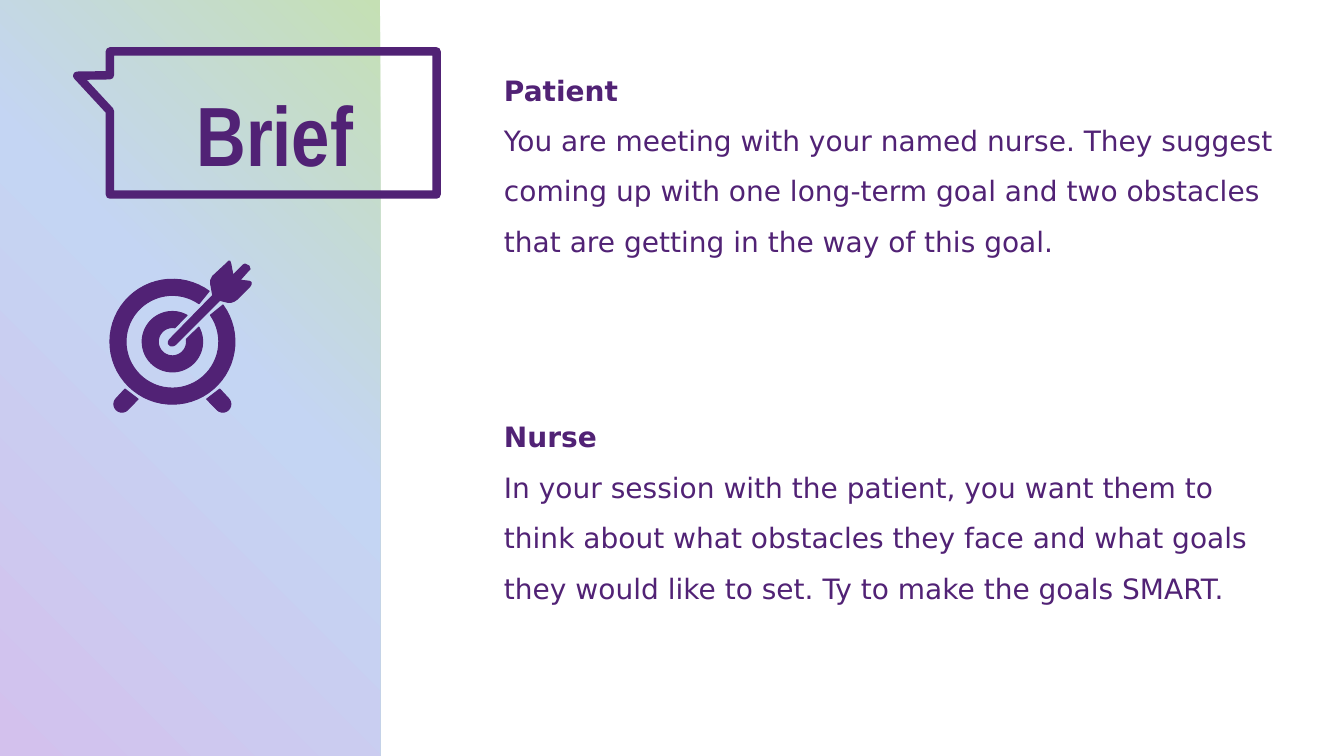
from math import cos, radians, sin

from pptx import Presentation
from pptx.dml.color import RGBColor
from pptx.enum.shapes import MSO_SHAPE
from pptx.enum.text import MSO_AUTO_SIZE
from pptx.oxml import parse_xml
from pptx.oxml.ns import nsdecls, qn
from pptx.util import Inches, Pt

PURPLE = RGBColor(0x51, 0x22, 0x75)
PINK = RGBColor(0xD3, 0xC1, 0xED)
BLUE = RGBColor(0xC4, 0xD5, 0xF3)
GREEN = RGBColor(0xC5, 0xE0, 0xB4)

TARGET_X, TARGET_Y = 1.71, 3.39

BRIEFS = [
    (0.51, 2.05, "Patient",
     "You are meeting with your named nurse. They suggest coming up with one "
     "long-term goal and two obstacles that are getting in the way of this goal."),
    (3.95, 2.12, "Nurse",
     "In your session with the patient, you want them to think about what obstacles "
     "they face and what goals they would like to set. Ty to make the goals SMART."),
]

ARROW = [
    (2.27, 2.59), (2.25, 2.61), (2.11, 2.74), (2.09, 2.78), (2.09, 2.82),
    (2.11, 2.93), (1.68, 3.37), (1.67, 3.39), (1.67, 3.41), (1.69, 3.43),
    (1.72, 3.43), (1.74, 3.42), (2.18, 2.98), (2.26, 3), (2.29, 3),
    (2.32, 2.99), (2.35, 2.97), (2.48, 2.84), (2.49, 2.82), (2.49, 2.8),
    (2.47, 2.79), (2.38, 2.78), (2.46, 2.69), (2.48, 2.67), (2.47, 2.64),
    (2.45, 2.63), (2.43, 2.62), (2.41, 2.63), (2.31, 2.73), (2.29, 2.62),
    (2.28, 2.59),
]


def arc(x, y, radius, start, end, steps=60):
    angles = [radians(start + (end - start) * step / steps) for step in range(steps + 1)]
    return [(x + radius * cos(angle), y + radius * sin(angle)) for angle in angles]


def open_ring(outer, inner, outer_gap, inner_gap):
    return (arc(TARGET_X, TARGET_Y, outer, -45 + outer_gap, 315 - outer_gap)
            + arc(TARGET_X, TARGET_Y, inner, 315 - inner_gap, -45 + inner_gap))


class SlideBuilder:
    def __init__(self, page, color):
        self.page = page
        self.color = color

    def apply(self, item, values):
        for name, value in values.items():
            setattr(item, name, value)

    def shape(self, kind, left, top, width, height):
        shape = self.page.shapes.add_shape(
            kind, Inches(left), Inches(top), Inches(width), Inches(height))
        shape.shadow.inherit = False
        return shape

    def panel(self, left, top, width, height, stops):
        panel = self.shape(MSO_SHAPE.RECTANGLE, left, top, width, height)
        panel.line.fill.background()
        panel.fill.gradient()
        marks = "".join(
            f'<a:gs pos="{percent * 1000}"><a:srgbClr val="{color}"/></a:gs>'
            for percent, color in stops)
        gradient = parse_xml(
            f'<a:gradFill {nsdecls("a")} rotWithShape="1"><a:gsLst>{marks}</a:gsLst>'
            '<a:path path="circle"><a:fillToRect t="100000" r="100000"/></a:path>'
            '</a:gradFill>')
        properties = panel._element.spPr
        properties.replace(properties.find(qn("a:gradFill")), gradient)

    def callout(self, left, top, width, height, tip):
        callout = self.shape(MSO_SHAPE.RECTANGULAR_CALLOUT, left, top, width, height)
        for index, value in enumerate(tip):
            callout.adjustments[index] = value
        callout.fill.background()
        callout.line.color.rgb = self.color
        callout.line.width = Pt(6)

    def text(self, left, top, width, height, lines, font, spacing, level=0, indent=0):
        box = self.page.shapes.add_textbox(
            Inches(left), Inches(top), Inches(width), Inches(height))
        frame = box.text_frame
        self.apply(frame, {"word_wrap": True, "auto_size": MSO_AUTO_SIZE.SHAPE_TO_FIT_TEXT})
        for index, (words, bold) in enumerate(lines):
            para = frame.paragraphs[0] if index == 0 else frame.add_paragraph()
            self.apply(para, {"line_spacing": spacing, "level": level})
            if indent:
                settings = para._p.get_or_add_pPr()
                settings.set("marL", str(Inches(indent)))
                settings.set("indent", "0")
            span = para.add_run()
            span.text = words
            self.apply(span.font, {**font, "bold": bold})
            span.font.color.rgb = self.color

    def icon(self, outlines):
        group = self.page.shapes.add_group_shape()
        for outline in outlines:
            points = [(Inches(x), Inches(y)) for x, y in outline]
            builder = group.shapes.build_freeform(*points[0])
            builder.add_line_segments(points[1:], close=True)
            part = builder.convert_to_shape()
            part.shadow.inherit = False
            part.fill.solid()
            part.fill.fore_color.rgb = self.color
            part.line.color.rgb = self.color
            part.line.width = Pt(0.75)


def main():
    deck = Presentation()
    deck.slide_width, deck.slide_height = Inches(13.33), Inches(7.5)
    page = deck.slides.add_slide(deck.slide_layouts[6])
    slide = SlideBuilder(page, PURPLE)

    slide.panel(0, 0, 3.77, 7.5, [(0, PINK), (56, BLUE), (100, GREEN)])
    slide.callout(1.09, 0.51, 3.24, 1.42, (-0.6, -0.33))
    slide.text(1.66, 0.57, 2.16, 1.31, [("Brief", True)],
               {"name": "Arial Narrow", "size": Pt(60)}, 1.2, level=2, indent=0.19)
    for top, height, role, brief in BRIEFS:
        slide.text(4.9, top, 7.91, height, [(role, True), (brief, False)],
                   {"name": "DejaVu Sans", "size": Pt(20)}, 1.5)

    left_leg = [(1.24, 3.86)] + arc(1.21, 4.01, 0.08, 225, 45, 12) + [(1.37, 3.96)]
    right_leg = [(2 * TARGET_X - x, y) for x, y in left_leg]
    slide.icon([
        open_ring(0.62, 0.46, 9, 10),
        open_ring(0.3, 0.14, 16, 35),
        left_leg,
        right_leg,
        ARROW,
    ])
    deck.save("out.pptx")


if __name__ == "__main__":
    main()
